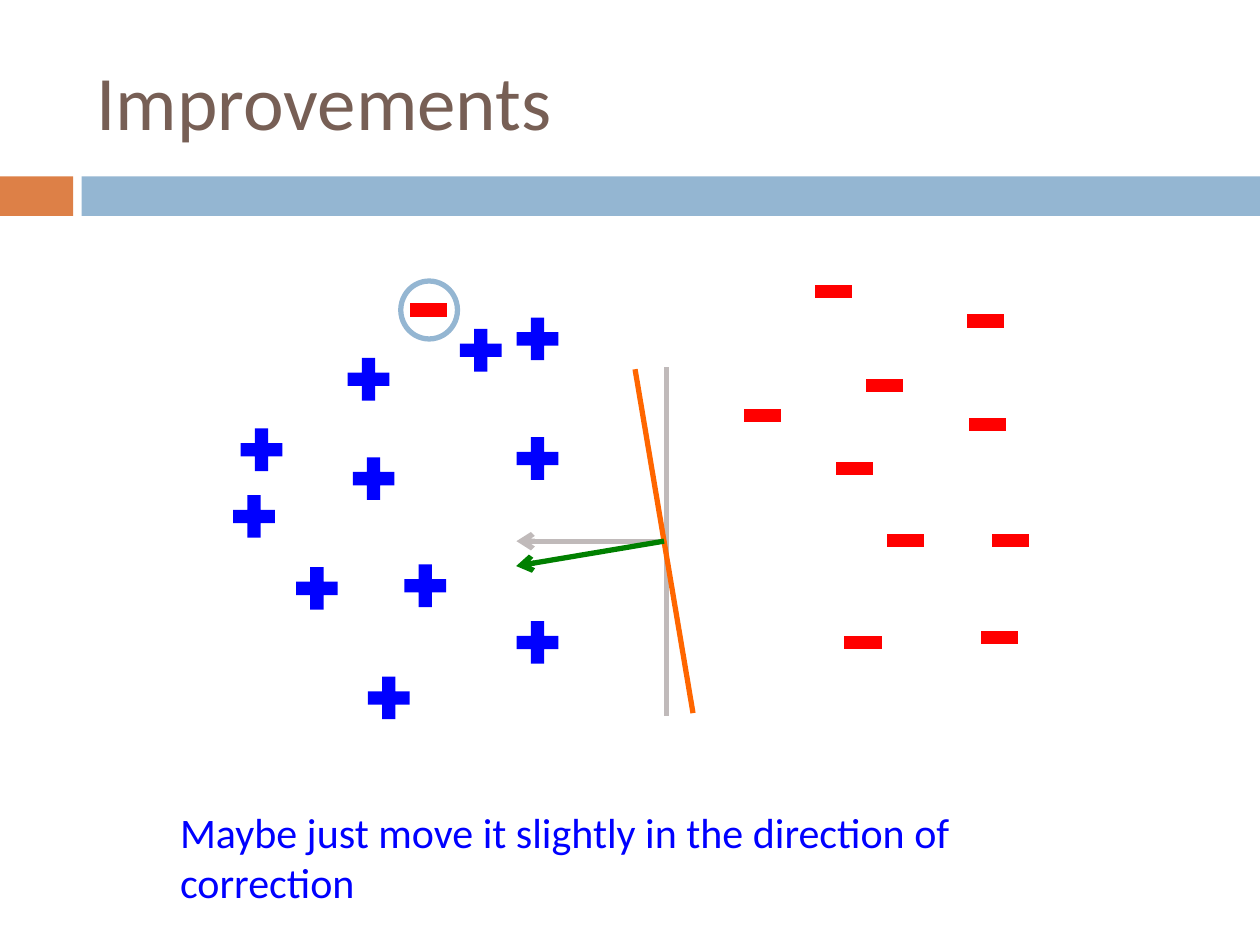
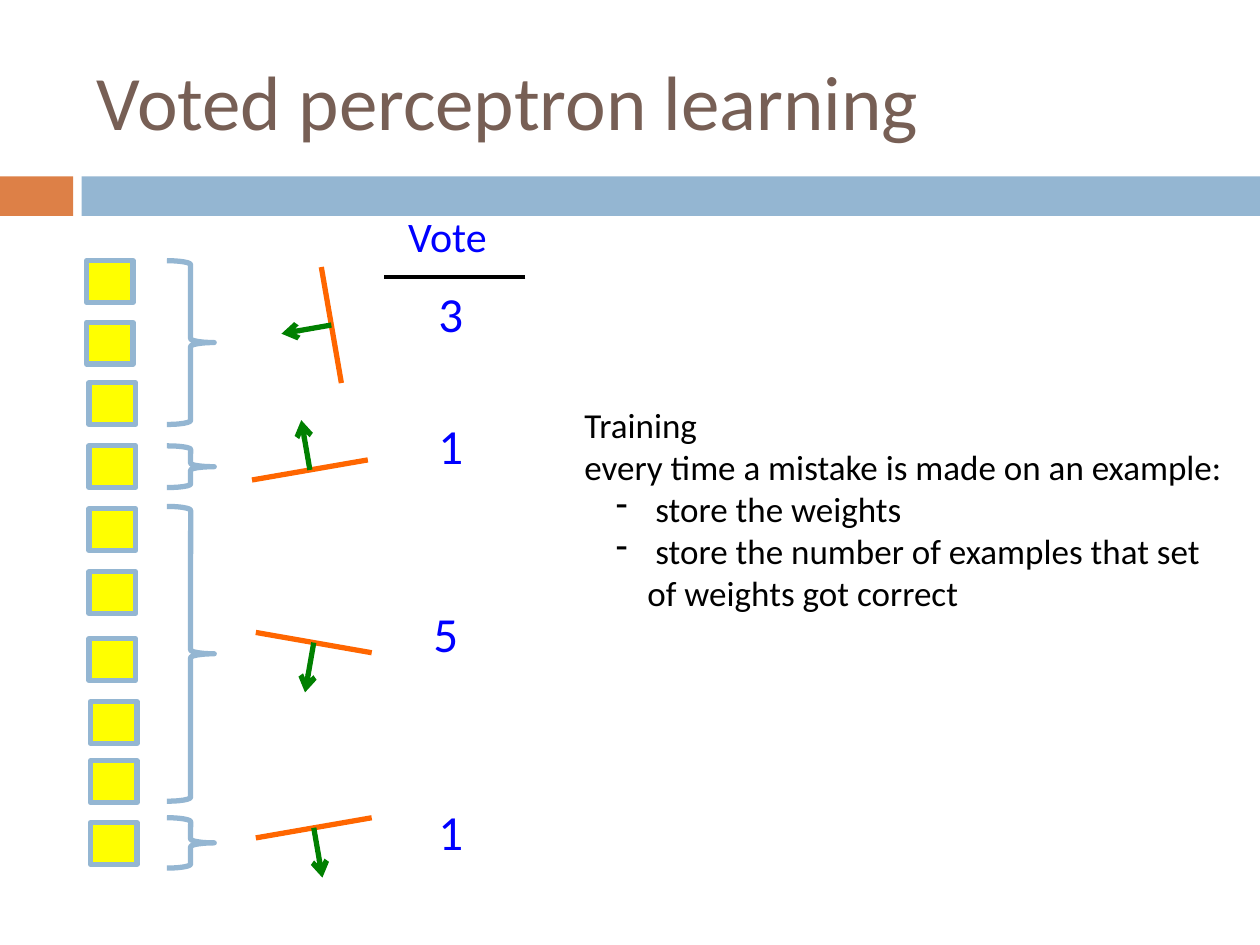
import collections
import dataclasses

import pptx
import pptx.dml.color
import pptx.enum.shapes
import pptx.enum.text
import pptx.oxml.xmlchemy
import pptx.util

Pt = pptx.util.Pt
SHAPE = pptx.enum.shapes.MSO_SHAPE
Box = collections.namedtuple("Box", "left top width height")
Round = collections.namedtuple("Round", "brace_top brace_height boundary vote vote_place")


@dataclasses.dataclass(frozen=True)
class Theme:
    font: str = "Calibri"
    title: str = "775F55"
    accent: str = "DD8047"
    band: str = "94B6D2"
    positive: str = "0000FF"
    negative: str = "FF0000"
    example: str = "FFFF00"
    old_model: str = "C0BABA"
    boundary: str = "FF6600"
    weights: str = "008000"
    ink: str = "000000"
    title_size: float = 44
    vote_size: float = 28
    caption_size: float = 24
    body_size: float = 20
    line_width: float = 3
    rule_width: float = 2.25


THEME = Theme()
TITLE_BOX = Box(48, 18, 642, 78)
BAND_BOX = Box(0, 100.8, 720, 22.6)
NORMAL_RATIO = 0.43

# Marker places are measured from the corner of the scatter box.
SCATTER_BOX = Box(129, 150, 464, 267)
PLUS_SIZE = (32.4, 33.1)
MINUS_SIZE = (28.8, 33.1)
POSITIVES = [(129.5, 33.6), (162, 27.1), (65.4, 50.2), (162, 95.5), (4.2, 90.5),
             (68.3, 107), (0, 128.6), (97.8, 168.2), (35.9, 169.7),
             (162, 200.6), (76.9, 232.3)]
MISTAKE = (101.4, 10.6)
NEGATIVES = [MISTAKE, (333.2, 0), (419.6, 17), (362, 53.8), (292.2, 71), (421, 76),
             (344.8, 101.3), (374.3, 142.3), (434, 142.3), (349.8, 200.6),
             (427.6, 197.8)]
OLD_BOUNDARY = ((251.9, 259), (251.9, 59.5))
NEW_BOUNDARY = ((267, 257.5), (233.9, 61))

# Places in the voting diagram are measured from its corner.
VOTING_BOX = Box(49.5, 149, 226, 353)
EXAMPLE_SIZE = (26.6, 23.8)
EXAMPLES = [(0, 0), (0, 35.3), (1.4, 69.8), (1.4, 105.8), (1.4, 141.8),
            (1.4, 177.8), (1.4, 216), (2.2, 252), (2.2, 285.8), (2.2, 321.1)]
ROUNDS = [
    Round(0, 93.6, ((145.6, 69.9), (134.1, 3.6)), "3", (193.9, 9.4)),
    Round(105.8, 23.8, ((94.5, 125.3), (160.7, 113.8)), "1", (193.9, 85)),
    Round(140.4, 168.5, ((162.9, 224), (96.7, 212.4)), "5", (191, 192.3)),
    Round(318.3, 28.8, ((162.9, 318.3), (96.7, 329.8)), "1", (193.9, 305.3)),
]
TRAINING_LINES = [
    ("Training", False),
    ("every time a mistake is made on an example:", False),
    (" store the weights", True),
    (" store the number of examples that set of weights got correct", True),
]


def rgb(color):
    return pptx.dml.color.RGBColor.from_string(color)


def lengths(values):
    return [Pt(value) for value in values]


def inside(box, place, size):
    return Box(box.left + place[0], box.top + place[1], *size)


def append_element(parent, tag, **attributes):
    element = pptx.oxml.xmlchemy.OxmlElement(tag)
    for name, value in attributes.items():
        element.set(name, value)
    parent.append(element)


def format_runs(paragraph, size, color):
    for run in paragraph.runs:
        run.font.name = THEME.font
        run.font.size = Pt(size)
        run.font.color.rgb = rgb(color)


def add_shape(slide, kind, box, fill=None, line=None):
    shape = slide.shapes.add_shape(kind, *lengths(box))
    shape.shadow.inherit = False
    if fill:
        shape.fill.solid()
        shape.fill.fore_color.rgb = rgb(fill)
    else:
        shape.fill.background()
    if line:
        shape.line.color.rgb = rgb(line)
        shape.line.width = Pt(THEME.line_width)
    else:
        shape.line.fill.background()


def add_line(shapes, start, end, color, width=THEME.line_width, arrow=False):
    connector = shapes.add_connector(
        pptx.enum.shapes.MSO_CONNECTOR.STRAIGHT, *lengths((*start, *end)))
    connector.line.color.rgb = rgb(color)
    connector.line.width = Pt(width)
    properties = connector._element.spPr
    if arrow:
        append_element(properties.ln, "a:tailEnd", type="arrow")
    append_element(properties, "a:effectLst")


def add_text(slide, box, lines, size, color, wrap=True):
    """Write (text, is_bullet) lines in one text box."""
    text_frame = slide.shapes.add_textbox(*lengths(box)).text_frame
    text_frame.word_wrap = wrap
    for index, (text, is_bullet) in enumerate(lines):
        paragraph = text_frame.add_paragraph() if index else text_frame.paragraphs[0]
        paragraph.text = text
        format_runs(paragraph, size, color)
        if is_bullet:
            paragraph.level = 1
            properties = paragraph._p.get_or_add_pPr()
            properties.set("marL", str(int(Pt(36))))
            properties.set("indent", str(int(Pt(-18))))
            append_element(properties, "a:buChar", char="-")


def add_bands(slide, box):
    accent_width, blue_left = 41.8, 46.6
    add_shape(slide, SHAPE.RECTANGLE, box._replace(width=accent_width), THEME.accent)
    blue = inside(box, (blue_left, 0), (box.width - blue_left, box.height))
    add_shape(slide, SHAPE.RECTANGLE, blue, THEME.band)


def add_titled_slide(presentation, title):
    slide = presentation.slides.add_slide(presentation.slide_layouts[5])
    add_bands(slide, BAND_BOX)
    shape = slide.shapes.title
    shape.left, shape.top, shape.width, shape.height = lengths(TITLE_BOX)
    text_frame = shape.text_frame
    text_frame.text = title
    text_frame.vertical_anchor = pptx.enum.text.MSO_ANCHOR.MIDDLE
    paragraph = text_frame.paragraphs[0]
    paragraph.alignment = pptx.enum.text.PP_ALIGN.LEFT
    format_runs(paragraph, THEME.title_size, THEME.title)
    return slide


def add_separator(slide, box, boundary, boundary_color, weights_color):
    """Draw a boundary and, from its middle, the weight vector at right angles to it."""
    (x1, y1), (x2, y2) = [(box.left + x, box.top + y) for x, y in boundary]
    middle = ((x1 + x2) / 2, (y1 + y2) / 2)
    tip = (middle[0] + NORMAL_RATIO * (y2 - y1), middle[1] - NORMAL_RATIO * (x2 - x1))
    group = slide.shapes.add_group_shape()
    add_line(group.shapes, (x1, y1), (x2, y2), boundary_color)
    add_line(group.shapes, middle, tip, weights_color, arrow=True)


def add_scatter(slide, box):
    add_separator(slide, box, OLD_BOUNDARY, THEME.old_model, THEME.old_model)
    for kind, size, places, color in (
            (SHAPE.MATH_PLUS, PLUS_SIZE, POSITIVES, THEME.positive),
            (SHAPE.MATH_MINUS, MINUS_SIZE, NEGATIVES, THEME.negative)):
        for place in places:
            add_shape(slide, kind, inside(box, place, size), color)
    add_separator(slide, box, NEW_BOUNDARY, THEME.boundary, THEME.weights)
    ring_place = (MISTAKE[0] - 1.4, MISTAKE[1])
    add_shape(slide, SHAPE.OVAL, inside(box, ring_place, PLUS_SIZE), line=THEME.band)


def add_voting_rounds(slide, box):
    for place in EXAMPLES:
        add_shape(slide, SHAPE.RECTANGLE, inside(box, place, EXAMPLE_SIZE),
                  THEME.example, THEME.band)
    for entry in ROUNDS:
        brace = inside(box, (45.9, entry.brace_top), (27, entry.brace_height))
        add_shape(slide, SHAPE.RIGHT_BRACE, brace, line=THEME.band)
        add_separator(slide, box, entry.boundary, THEME.boundary, THEME.weights)
        add_text(slide, inside(box, entry.vote_place, (30.2, 41)),
                 [(entry.vote, False)], THEME.vote_size, THEME.positive, wrap=False)


def add_vote_heading(slide, box):
    add_text(slide, inside(box, (6.5, 0), (60, 36)), [("Vote", False)],
             THEME.caption_size, THEME.positive, wrap=False)
    bottom = box.top + box.height
    add_line(slide.shapes, (box.left + box.width, bottom), (box.left, bottom),
             THEME.ink, THEME.rule_width)


def build_improvements(presentation):
    slide = add_titled_slide(presentation, "Improvements")
    add_scatter(slide, SCATTER_BOX)
    caption = "Maybe just move it slightly in the direction of correction"
    add_text(slide, Box(95.8, 457.2, 546.5, 36), [(caption, False)],
             THEME.caption_size, THEME.positive)


def build_voted_perceptron(presentation):
    slide = add_titled_slide(presentation, "Voted perceptron learning")
    add_voting_rounds(slide, VOTING_BOX)
    add_vote_heading(slide, Box(219.6, 116.6, 80.6, 41.8))
    add_text(slide, Box(326.9, 226.8, 378.7, 128.2), TRAINING_LINES,
             THEME.body_size, THEME.ink)


def main():
    presentation = pptx.Presentation()
    presentation.slide_width, presentation.slide_height = Pt(720), Pt(540)
    build_improvements(presentation)
    build_voted_perceptron(presentation)
    presentation.save("out.pptx")


if __name__ == "__main__":
    main()
